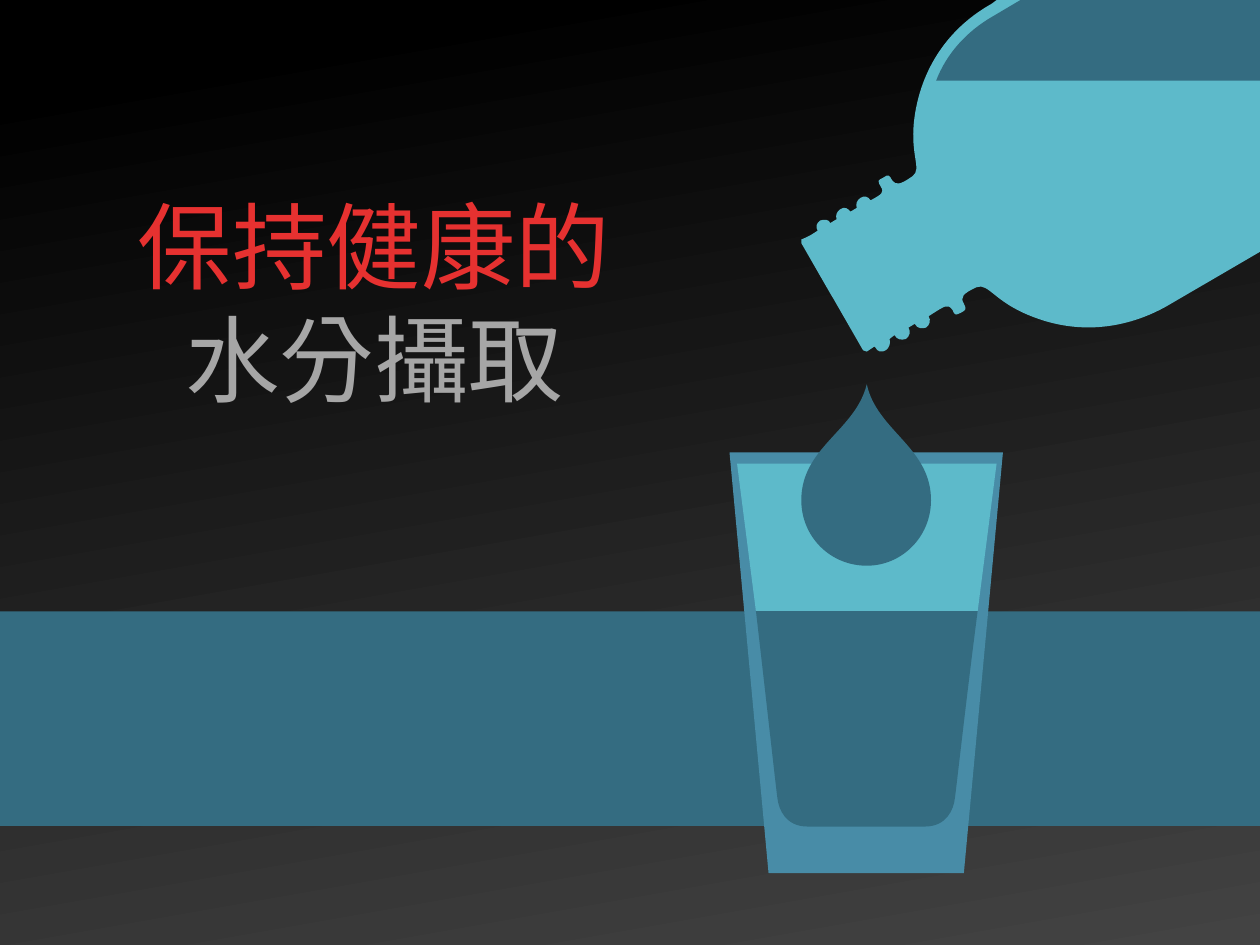
from lxml.etree import SubElement
from pptx import Presentation
from pptx.dml.color import RGBColor
from pptx.enum.lang import MSO_LANGUAGE_ID
from pptx.enum.shapes import MSO_SHAPE
from pptx.enum.text import MSO_ANCHOR, MSO_AUTO_SIZE, PP_ALIGN
from pptx.oxml.ns import qn
from pptx.util import Inches, Pt

DEEP_WATER, LIGHT_WATER, GLASS = "346C81", "5DBACA", "488CA7"


def paint(fill, colour):
    fill.solid()
    fill.fore_color.rgb = RGBColor.from_string(colour)


def draw_outline(shapes, colour, start, segments):
    """Two numbers make a line to a point; six make a Bézier curve."""
    corners = [start] + [segment[-2:] for segment in segments]
    left, top = (min(values) for values in zip(*corners))
    builder = shapes.build_freeform(Inches(start[0]), Inches(start[1]), scale=1.0)
    builder.add_line_segments([(Inches(x), Inches(y)) for x, y in corners[1:]], close=True)
    shape = builder.convert_to_shape()
    lines = list(shape.element.iter(qn("a:lnTo")))
    for line, segment in zip(lines, segments):
        if len(segment) == 6:
            curve = line.makeelement(qn("a:cubicBezTo"))
            for x, y in zip(segment[::2], segment[1::2]):
                SubElement(curve, qn("a:pt"), x=str(Inches(x - left)), y=str(Inches(y - top)))
            line.getparent().replace(line, curve)
    shape.shadow.inherit = False
    paint(shape.fill, colour)
    shape.line.fill.background()


presentation = Presentation()
presentation.slide_width, presentation.slide_height = Inches(10), Inches(7.5)
width, height = presentation.slide_width, presentation.slide_height
slide = presentation.slides.add_slide(presentation.slide_layouts[5])

background = slide.background.fill
background.gradient()
background.gradient_angle = 280
for stop, position, colour in zip(background.gradient_stops, (0.08, 1), ("000000", "434343")):
    stop.position = position
    stop.color.rgb = RGBColor.from_string(colour)

# Table top
table_top = slide.shapes.add_shape(
    MSO_SHAPE.RECTANGLE, 0, int(height * 0.647), width, int(height * 0.227))
table_top.shadow.inherit = False
paint(table_top.fill, DEEP_WATER)
table_top.line.fill.background()

# Title
title = slide.shapes.title
title.left, title.top = int(width * 0.029), int(height * 0.192)
title.width, title.height = int(width * 0.536), int(height * 0.256)
title.text_frame.word_wrap = True
title.text_frame.auto_size = MSO_AUTO_SIZE.SHAPE_TO_FIT_TEXT
title.text_frame.vertical_anchor = MSO_ANCHOR.TOP
paragraph = title.text_frame.paragraphs[0]
paragraph.alignment = PP_ALIGN.CENTER
paragraph.font.name = "Arial"
paragraph.font.size = Pt(54)
for text, colour in (("保持健康的", "E63130"), ("水分攝取", "A6A6A6")):
    if paragraph.runs:
        paragraph.add_line_break()
    run = paragraph.add_run()
    run.text = text
    run.font.language_id = MSO_LANGUAGE_ID.TRADITIONAL_CHINESE
    paint(run.font.fill, colour)
    SubElement(run.font.fill._xPr, qn("a:ea"), typeface="Arial")

# Glass, its water and the falling drop
art = slide.shapes.add_group_shape().shapes
draw_outline(art, GLASS, (5.79, 3.59), [(6.1, 6.93), (7.65, 6.93), (7.96, 3.59)])
draw_outline(art, LIGHT_WATER, (5.85, 3.68), [(6, 4.85), (7.76, 4.85), (7.91, 3.68)])
draw_outline(art, DEEP_WATER, (6, 4.85), [
    (6.08, 5.54, 6.16, 6.26, 6.17, 6.33), (6.18, 6.43, 6.24, 6.56, 6.41, 6.56),
    (7.34, 6.56), (7.51, 6.56, 7.57, 6.43, 7.58, 6.33),
    (7.59, 6.26, 7.67, 5.54, 7.76, 4.85)])
draw_outline(art, DEEP_WATER, (6.88, 3.05), [
    (6.79, 3.42, 6.36, 3.55, 6.36, 3.97), (6.36, 4.26, 6.59, 4.49, 6.88, 4.49),
    (7.16, 4.49, 7.39, 4.26, 7.39, 3.97), (7.39, 3.55, 6.96, 3.42, 6.88, 3.05)])

# Bottle: upper shoulder, upper thread, mouth, lower thread, lower shoulder
draw_outline(art, LIGHT_WATER, (7.91, 0), [
    (7.87, 0.03), (7.55, 0.21, 7.34, 0.5, 7.27, 0.86),
    (7.2, 1.22, 7.33, 1.34, 7.24, 1.4), (7.14, 1.47, 7.11, 1.47, 7.08, 1.43),
    (7.06, 1.39, 7.05, 1.38, 7.01, 1.41), (6.97, 1.43, 6.96, 1.43, 6.99, 1.48),
    (7.02, 1.53, 7, 1.54, 6.91, 1.59),
    (6.89, 1.56, 6.86, 1.55, 6.83, 1.57), (6.8, 1.59, 6.79, 1.62, 6.8, 1.65), (6.75, 1.68),
    (6.73, 1.65, 6.7, 1.64, 6.67, 1.66), (6.64, 1.68, 6.63, 1.71, 6.64, 1.74), (6.59, 1.77),
    (6.58, 1.74, 6.54, 1.74, 6.51, 1.75), (6.48, 1.77, 6.47, 1.8, 6.49, 1.83),
    (6.42, 1.88, 6.36, 1.9, 6.36, 1.9),
    (6.36, 1.93), (6.59, 2.33), (6.62, 2.38), (6.85, 2.78), (6.88, 2.79),
    (6.94, 2.75), (6.95, 2.76),
    (6.96, 2.79, 7, 2.8, 7.03, 2.78), (7.06, 2.76, 7.07, 2.72, 7.06, 2.69), (7.1, 2.66),
    (7.12, 2.7, 7.16, 2.7, 7.19, 2.69), (7.22, 2.67, 7.23, 2.63, 7.21, 2.6), (7.26, 2.57),
    (7.28, 2.61, 7.32, 2.61, 7.35, 2.6), (7.38, 2.58, 7.39, 2.54, 7.37, 2.51),
    (7.51, 2.42, 7.52, 2.41, 7.56, 2.46), (7.58, 2.51, 7.59, 2.5, 7.63, 2.48),
    (7.67, 2.46, 7.67, 2.45, 7.65, 2.41), (7.62, 2.36, 7.64, 2.33, 7.75, 2.28),
    (7.85, 2.24, 7.89, 2.41, 8.24, 2.53), (8.58, 2.65, 8.94, 2.61, 9.26, 2.43),
    (10.22, 1.87), (11.88, 0.91), (12.28, 0.69), (12.28, 0)])
draw_outline(art, DEEP_WATER, (8.1, 0), [
    (7.88, 0.13), (7.67, 0.25, 7.51, 0.43, 7.43, 0.64),
    (12.18, 0.64), (12.28, 0.58), (12.28, 0)])

presentation.save("out.pptx")
